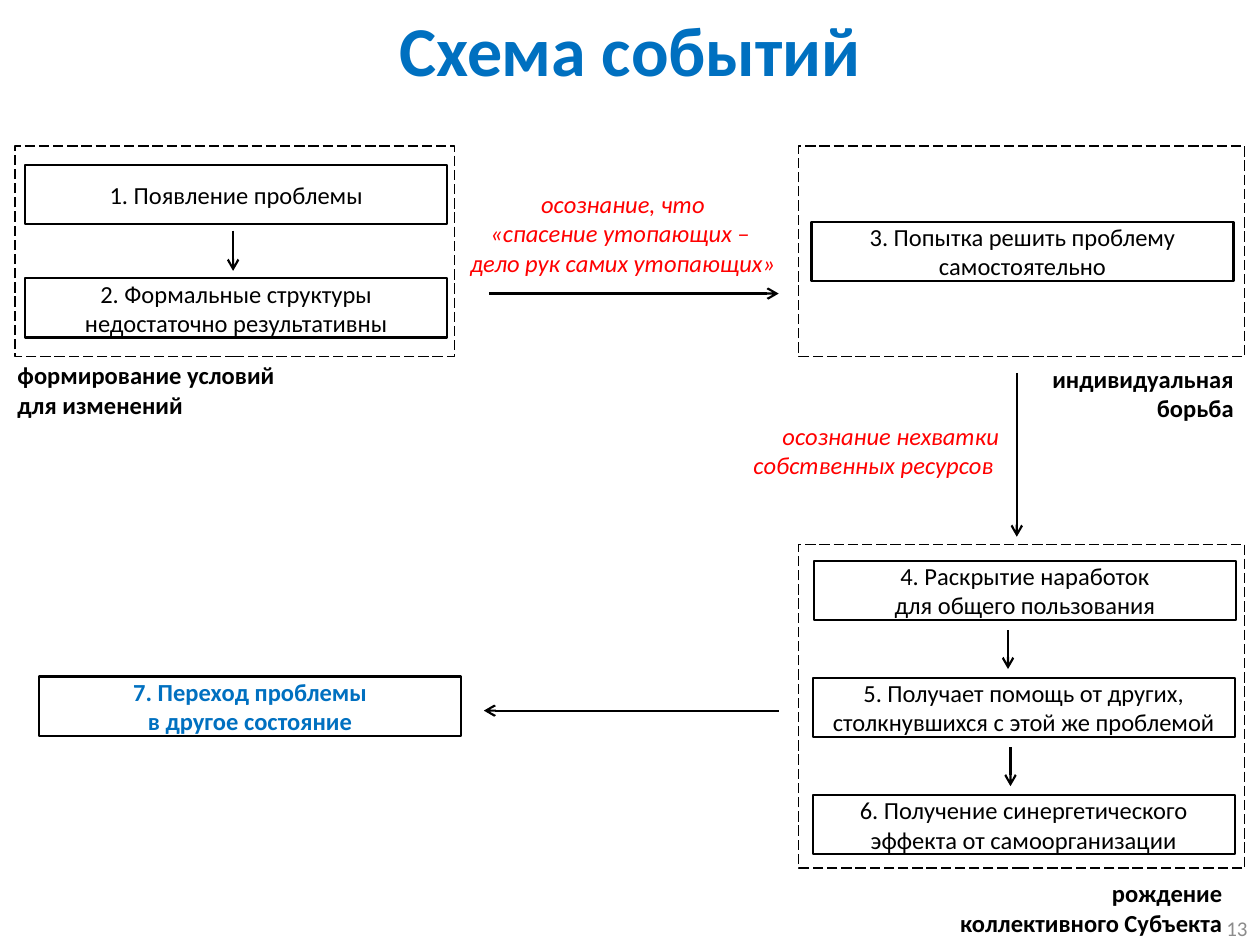
import pptx
import pptx.util
import pptx.dml.color
import pptx.enum.dml
import pptx.enum.shapes
import pptx.enum.text
import pptx.oxml.ns
import lxml.etree

Inches = pptx.util.Inches
Pt = pptx.util.Pt
RGBColor = pptx.dml.color.RGBColor
ALIGN = pptx.enum.text.PP_ALIGN
ANCHOR = pptx.enum.text.MSO_ANCHOR

BLACK = RGBColor(0x00, 0x00, 0x00)
BLUE = RGBColor(0x00, 0x70, 0xC0)
RED = RGBColor(0xFF, 0x00, 0x00)
GRAY = RGBColor(0x8C, 0x8C, 0x8C)
FONT = "Calibri"

# Content: "\n" starts a paragraph, "\v" breaks a line within one
TITLE = "Схема событий"
PAGE_NUMBER = "13"
STEP_SIZE = (3.35, 0.47)

# Steps: text, left, top, colour, bold
STEPS = [
    ("1. Появление проблемы", 0.2, 1.31, BLACK, False),
    ("2. Формальные структуры недостаточно результативны", 0.2, 2.21, BLACK, False),
    ("3. Попытка решить проблему самостоятельно", 6.44, 1.76, BLACK, False),
    ("4. Раскрытие наработок\vдля общего пользования", 6.46, 4.45, BLACK, False),
    ("5. Получает помощь от других, столкнувшихся с этой же проблемой",
     6.45, 5.38, BLACK, False),
    ("6. Получение синергетического эффекта от самоорганизации",
     6.45, 6.31, BLACK, False),
    ("7. Переход проблемы\vв другое состояние", 0.31, 5.37, BLUE, True),
]

# Dashed stage frames: left, top, width, height
FRAMES = [
    (0.12, 1.16, 3.49, 1.67),
    (6.34, 1.16, 3.54, 1.67),
    (6.34, 4.32, 3.54, 2.57),
]

# Stage names: text, box, alignment
STAGE_NAMES = [
    ("формирование условий\nдля изменений", (0.04, 2.81, 2.25, 0.57), ALIGN.LEFT),
    ("индивидуальная\nборьба", (8.24, 2.84, 1.65, 0.57), ALIGN.RIGHT),
    ("рождение\nколлективного Субъекта", (7.51, 6.92, 2.29, 0.57), ALIGN.RIGHT),
]

# Insights beside the long arrows: text, box, alignment, wrap
INSIGHTS = [
    ("осознание, что\n«спасение утопающих – \vдело рук самих утопающих»",
     (3.63, 1.45, 2.63, 0.81), ALIGN.CENTER, True),
    ("осознание нехватки\nсобственных ресурсов ",
     (5.86, 3.29, 2.17, 0.57), ALIGN.RIGHT, False),
]

# Arrows: start x, start y, end x, end y
ARROWS = [
    (1.85, 1.83, 1.85, 2.15),
    (3.88, 2.33, 6.18, 2.33),
    (8.07, 2.96, 8.07, 4.26),
    (8.0, 5.0, 8.0, 5.31),
    (8.02, 5.93, 8.02, 6.24),
    (6.18, 5.64, 3.84, 5.64),
]


def write_text(shape, text, size, color, alignment, bold=False, italic=False,
               anchor=ANCHOR.MIDDLE, wrap=True):
    frame = shape.text_frame
    frame.text = text
    frame.word_wrap = wrap
    frame.vertical_anchor = anchor
    for paragraph in frame.paragraphs:
        paragraph.alignment = alignment
        font = paragraph.font
        font.name, font.size = FONT, Pt(size)
        font.bold, font.italic = bold, italic
        font.color.rgb = color


def add_box(slide, box, line_width):
    shape = slide.shapes.add_shape(
        pptx.enum.shapes.MSO_SHAPE.RECTANGLE, *map(Inches, box))
    shape.shadow.inherit = False
    shape.fill.background()
    shape.line.color.rgb = BLACK
    shape.line.width = Pt(line_width)
    return shape


def add_label(slide, text, box, alignment, color, wrap=False, **style):
    label = slide.shapes.add_textbox(*map(Inches, box))
    write_text(label, text, 14, color, alignment, anchor=ANCHOR.TOP,
               wrap=wrap, **style)
    label.text_frame.auto_size = pptx.enum.text.MSO_AUTO_SIZE.SHAPE_TO_FIT_TEXT


def add_arrow(slide, points):
    arrow = slide.shapes.add_connector(
        pptx.enum.shapes.MSO_CONNECTOR.STRAIGHT, *map(Inches, points))
    arrow.line.color.rgb = BLACK
    arrow.line.width = Pt(1.25)
    qn = pptx.oxml.ns.qn
    lxml.etree.SubElement(arrow.line._get_or_add_ln(), qn("a:tailEnd"), type="arrow")
    lxml.etree.SubElement(arrow._element.spPr, qn("a:effectLst"))


def main():
    presentation = pptx.Presentation()
    presentation.slide_width = Inches(10)
    presentation.slide_height = Inches(7.5)
    slide = presentation.slides.add_slide(presentation.slide_layouts[5])

    # Title and page number
    title = slide.shapes.title
    title.left, title.top, title.width, title.height = map(Inches, (0, 0, 10, 0.77))
    write_text(title, TITLE, 40, BLUE, ALIGN.CENTER, bold=True)
    number = slide.shapes.add_textbox(*map(Inches, (9.57, 7.21, 0.43, 0.31)))
    write_text(number, PAGE_NUMBER, 12, GRAY, ALIGN.RIGHT)

    # Stage frames
    for box in FRAMES:
        frame = add_box(slide, box, 0.75)
        frame.line.dash_style = pptx.enum.dml.MSO_LINE.LONG_DASH

    # Steps
    for text, left, top, color, bold in STEPS:
        step = add_box(slide, (left, top, *STEP_SIZE), 1.25)
        write_text(step, text, 14, color, ALIGN.CENTER, bold=bold)

    # Labels
    for text, box, alignment in STAGE_NAMES:
        add_label(slide, text, box, alignment, BLACK, bold=True)
    for text, box, alignment, wrap in INSIGHTS:
        add_label(slide, text, box, alignment, RED, wrap, italic=True)

    # Arrows
    for points in ARROWS:
        add_arrow(slide, points)

    presentation.save("out.pptx")


if __name__ == "__main__":
    main()
